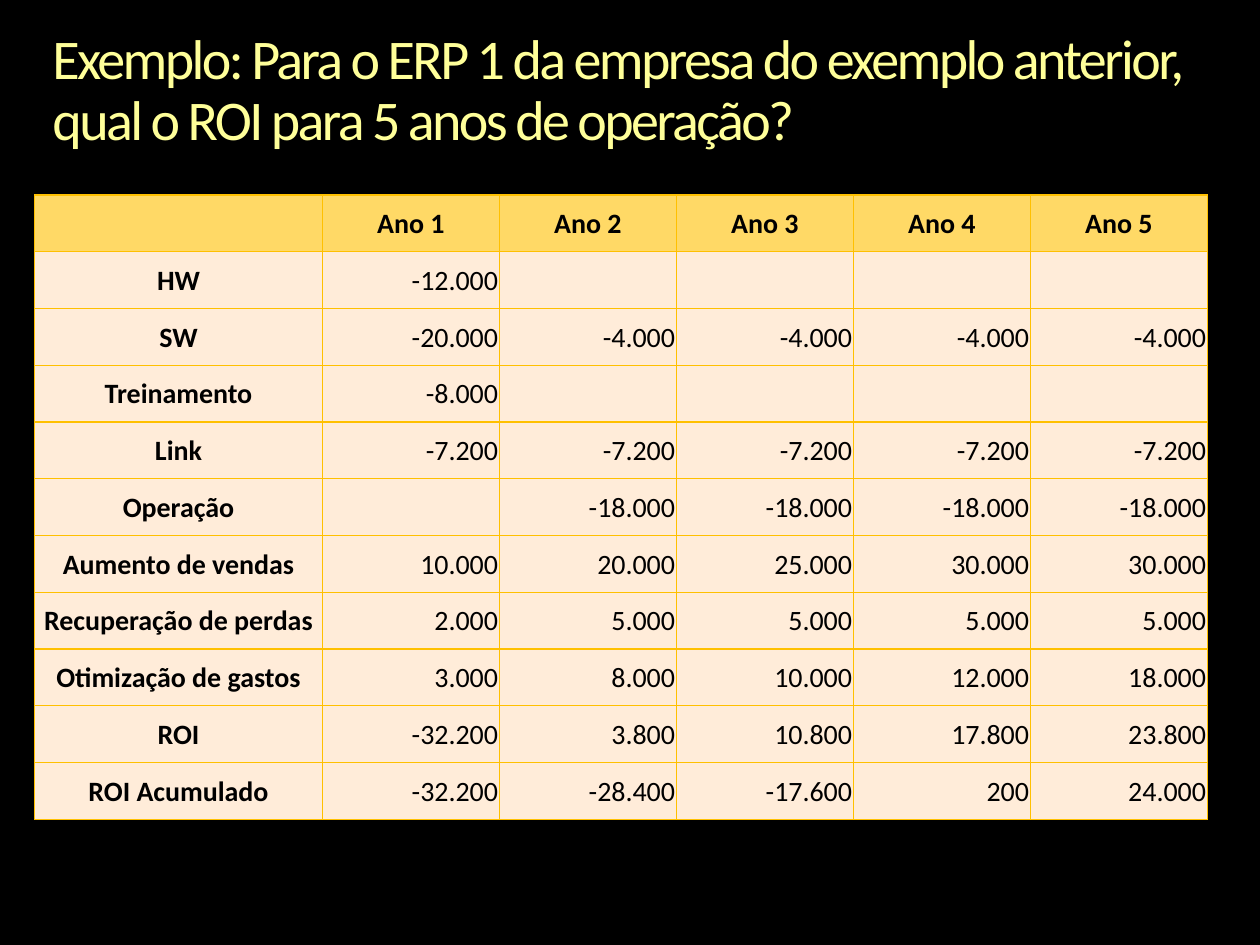
import pptx
import pptx.dml.color
import pptx.enum.text
import pptx.oxml
import pptx.oxml.ns
import pptx.util

Pt = pptx.util.Pt
ALIGN = pptx.enum.text.PP_ALIGN
ANCHOR = pptx.enum.text.MSO_ANCHOR

FONT = "Calibri"
COLORS = {
    "background": "000000",
    "title": "FFFF99",
    "text": "000000",
    "header": "FFD966",
    "body": "FFECD9",
    "border": "FFC000",
}
TITLE = "Exemplo: Para o ERP 1 da empresa do exemplo anterior, qual o ROI para 5 anos de operação?"
ROWS = [
    ["", "Ano 1", "Ano 2", "Ano 3", "Ano 4", "Ano 5"],
    ["HW", "-12.000", "", "", "", ""],
    ["SW", "-20.000", "-4.000", "-4.000", "-4.000", "-4.000"],
    ["Treinamento", "-8.000", "", "", "", ""],
    ["Link", "-7.200", "-7.200", "-7.200", "-7.200", "-7.200"],
    ["Operação", "", "-18.000", "-18.000", "-18.000", "-18.000"],
    ["Aumento de vendas", "10.000", "20.000", "25.000", "30.000", "30.000"],
    ["Recuperação de perdas", "2.000", "5.000", "5.000", "5.000", "5.000"],
    ["Otimização de gastos", "3.000", "8.000", "10.000", "12.000", "18.000"],
    ["ROI", "-32.200", "3.800", "10.800", "17.800", "23.800"],
    ["ROI Acumulado", "-32.200", "-28.400", "-17.600", "200", "24.000"],
]
LABEL_WIDTH = 164.4


def color(name):
    return pptx.dml.color.RGBColor.from_string(COLORS[name])


def set_font(paragraph, size, color_name, bold=False):
    font = paragraph.font
    font.name = FONT
    font.size = Pt(size)
    font.bold = bold
    font.color.rgb = color(color_name)


def add_title(slide, left, top, width, height):
    box = slide.shapes.add_textbox(Pt(left), Pt(top), Pt(width), Pt(height))
    frame = box.text_frame
    frame.word_wrap = True
    frame.auto_size = pptx.enum.text.MSO_AUTO_SIZE.SHAPE_TO_FIT_TEXT
    frame.margin_left = frame.margin_right = frame.margin_top = frame.margin_bottom = 0
    paragraph = frame.paragraphs[0]
    paragraph.line_spacing = 0.9
    run = paragraph.add_run()
    run.text = TITLE
    run._r.get_or_add_rPr().set("spc", "-150")
    set_font(paragraph, 32, "title")


def add_borders(cell):
    properties = cell._tc.get_or_add_tcPr()
    for side in ("lnL", "lnR", "lnT", "lnB"):
        properties.append(pptx.oxml.parse_xml(
            f'<a:{side} {pptx.oxml.ns.nsdecls("a")} w="{Pt(0.75)}"><a:solidFill>'
            f'<a:srgbClr val="{COLORS["border"]}"/></a:solidFill></a:{side}>'))


def fill_cell(cell, text, is_header, is_label):
    add_borders(cell)
    cell.fill.solid()
    cell.fill.fore_color.rgb = color("header" if is_header else "body")
    cell.vertical_anchor = ANCHOR.MIDDLE
    cell.margin_left = cell.margin_right = cell.margin_top = Pt(0.75)
    cell.margin_bottom = 0
    cell.text = text
    paragraph = cell.text_frame.paragraphs[0]
    is_heading = is_header or is_label
    paragraph.alignment = ALIGN.CENTER if is_heading else ALIGN.RIGHT
    set_font(paragraph, 16, "text", bold=is_heading)


def add_roi_table(slide, left, top, width, height):
    row_count, column_count = len(ROWS), len(ROWS[0])
    table = slide.shapes.add_table(
        row_count, column_count, Pt(left), Pt(top), Pt(width), Pt(height)).table
    year_width = (width - LABEL_WIDTH) / (column_count - 1)
    for index, column in enumerate(table.columns):
        column.width = Pt(year_width if index else LABEL_WIDTH)
    for row_index, (row, texts) in enumerate(zip(table.rows, ROWS)):
        row.height = Pt(height / row_count)
        for column_index, text in enumerate(texts):
            fill_cell(table.cell(row_index, column_index), text,
                      row_index == 0, column_index == 0)


def main():
    presentation = pptx.Presentation()
    presentation.slide_width = Pt(720)
    presentation.slide_height = Pt(540)
    slide = presentation.slides.add_slide(presentation.slide_layouts[6])
    slide.background.fill.solid()
    slide.background.fill.fore_color.rgb = color("background")
    add_title(slide, 30, 18, 660, 70)
    add_roi_table(slide, 19.8, 111.4, 670.2, 357)
    presentation.save("out.pptx")


if __name__ == "__main__":
    main()
